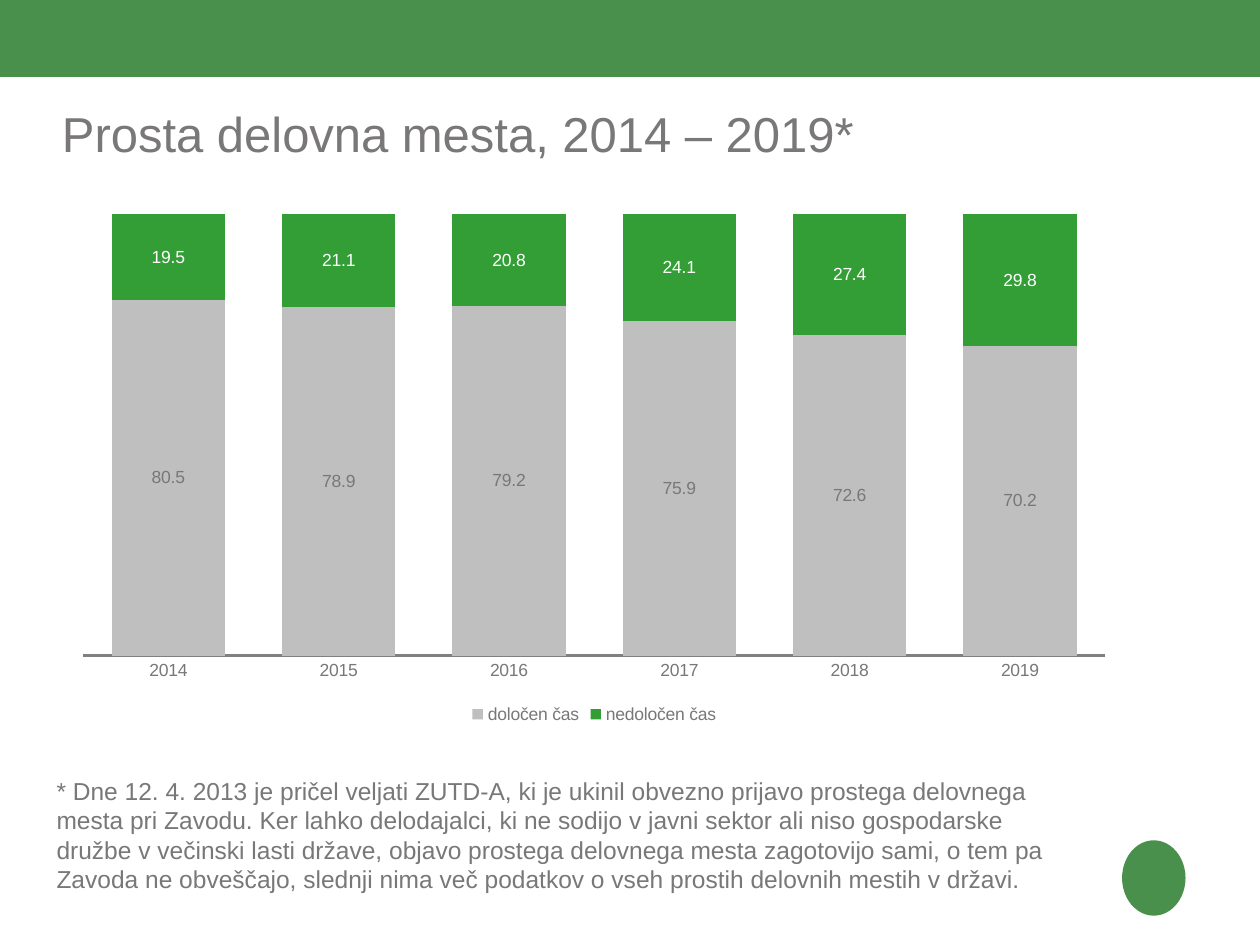
import pptx
import pptx.chart.data
import pptx.dml.color
import pptx.enum.chart
import pptx.enum.shapes
import pptx.oxml
import pptx.util
from pptx.util import Cm

GREEN = "49904D"
GREY = "797777"


def color(hex_string):
    return pptx.dml.color.RGBColor.from_string(hex_string)


def add_text(page, text, left, top, width, height, size, inset):
    box = page.shapes.add_textbox(Cm(left), Cm(top), Cm(width), Cm(height))
    frame = box.text_frame
    frame.word_wrap = True
    frame.margin_left = frame.margin_right = Cm(inset)
    frame.margin_top = frame.margin_bottom = Cm(inset / 2)
    span = frame.paragraphs[0].add_run()
    span.text = text
    span.font.name = "Arial"
    span.font.size = pptx.util.Pt(size)
    span.font.color.rgb = color(GREY)


deck = pptx.Presentation()
deck.slide_width = Cm(25.4)
deck.slide_height = Cm(19.05)
page = deck.slides.add_slide(deck.slide_layouts[6])

# Top band and a plain disc in the emblem's place
shape_kinds = pptx.enum.shapes.MSO_SHAPE
for kind, left, top, width, height in [
    (shape_kinds.RECTANGLE, 0, 0, 25.4, 1.55),
    (shape_kinds.OVAL, 22.62, 16.94, 1.28, 1.52),
]:
    shape = page.shapes.add_shape(kind, Cm(left), Cm(top), Cm(width), Cm(height))
    shape.shadow.inherit = False
    shape.fill.solid()
    shape.fill.fore_color.rgb = color(GREEN)
    shape.line.fill.background()

# Title and footnote
add_text(page, "Prosta delovna mesta, 2014 – 2019*",
         left=1.25, top=2.08, width=23.52, height=1.8, size=28, inset=0)
add_text(page,
         "* Dne 12. 4. 2013 je pričel veljati ZUTD-A, ki je ukinil obvezno prijavo "
         "prostega delovnega mesta pri Zavodu. Ker lahko delodajalci, ki ne sodijo v "
         "javni sektor ali niso gospodarske družbe v večinski lasti države, objavo "
         "prostega delovnega mesta zagotovijo sami, o tem pa Zavoda ne obveščajo, "
         "slednji nima več podatkov o vseh prostih delovnih mestih v državi.",
         left=0.89, top=15.52, width=21.21, height=2.64, size=14, inset=0.25)

# Chart: shares of vacancies by contract type
data = pptx.chart.data.CategoryChartData(number_format="0.0")
data.categories = [str(year) for year in range(2014, 2020)]
data.add_series("določen čas", [80.5, 78.9, 79.2, 75.9, 72.6, 70.2])
data.add_series("nedoločen čas", [19.5, 21.1, 20.8, 24.1, 27.4, 29.8])
chart = page.shapes.add_chart(
    pptx.enum.chart.XL_CHART_TYPE.COLUMN_STACKED_100,
    Cm(1.25), Cm(4.11), Cm(21.46), Cm(10.59), data).chart
chart.has_title = False
chart.font.name = "Arial"
chart.font.size = pptx.util.Pt(10)
chart.font.color.rgb = color(GREY)

# Bars and their labels
plot = chart.plots[0]
plot.gap_width = 50
plot.overlap = 100
plot.vary_by_categories = False
for series, fill, label_color in zip(plot.series, ["BFBFBF", "339E35"], [GREY, "FFFFFF"]):
    series.format.fill.solid()
    series.format.fill.fore_color.rgb = color(fill)
    labels = series.data_labels
    labels.show_value = True
    labels.number_format = "0.0"
    labels.number_format_is_linked = False
    labels.position = pptx.enum.chart.XL_LABEL_POSITION.CENTER
    labels.font.name = "Arial"
    labels.font.size = pptx.util.Pt(10)
    labels.font.color.rgb = color(label_color)

# Axes: only the category line and labels show
for axis in (chart.category_axis, chart.value_axis):
    axis.has_major_gridlines = False
    axis.major_tick_mark = pptx.enum.chart.XL_TICK_MARK.NONE
    axis.minor_tick_mark = pptx.enum.chart.XL_TICK_MARK.NONE
chart.category_axis.format.line.color.rgb = color("808080")
chart.category_axis.format.line.width = pptx.util.Pt(1.5)
chart.value_axis.tick_label_position = pptx.enum.chart.XL_TICK_LABEL_POSITION.NONE
chart.value_axis.format.line.fill.background()

# Legend
chart.has_legend = True
chart.legend.position = pptx.enum.chart.XL_LEGEND_POSITION.BOTTOM
chart.legend.include_in_layout = False

# Fixed inner plot area, as fractions of the chart
plot_area = chart.element.chart.plotArea
for old_layout in plot_area.findall(pptx.oxml.ns.qn("c:layout")):
    plot_area.remove(old_layout)
plot_area.insert(0, pptx.oxml.parse_xml(
    '<c:layout xmlns:c="http://schemas.openxmlformats.org/drawingml/2006/chart">'
    '<c:manualLayout><c:layoutTarget val="inner"/>'
    '<c:xMode val="edge"/><c:yMode val="edge"/>'
    '<c:x val="0.02"/><c:y val="0.02"/><c:w val="0.96"/><c:h val="0.84"/>'
    '</c:manualLayout></c:layout>'))

deck.save("out.pptx")
